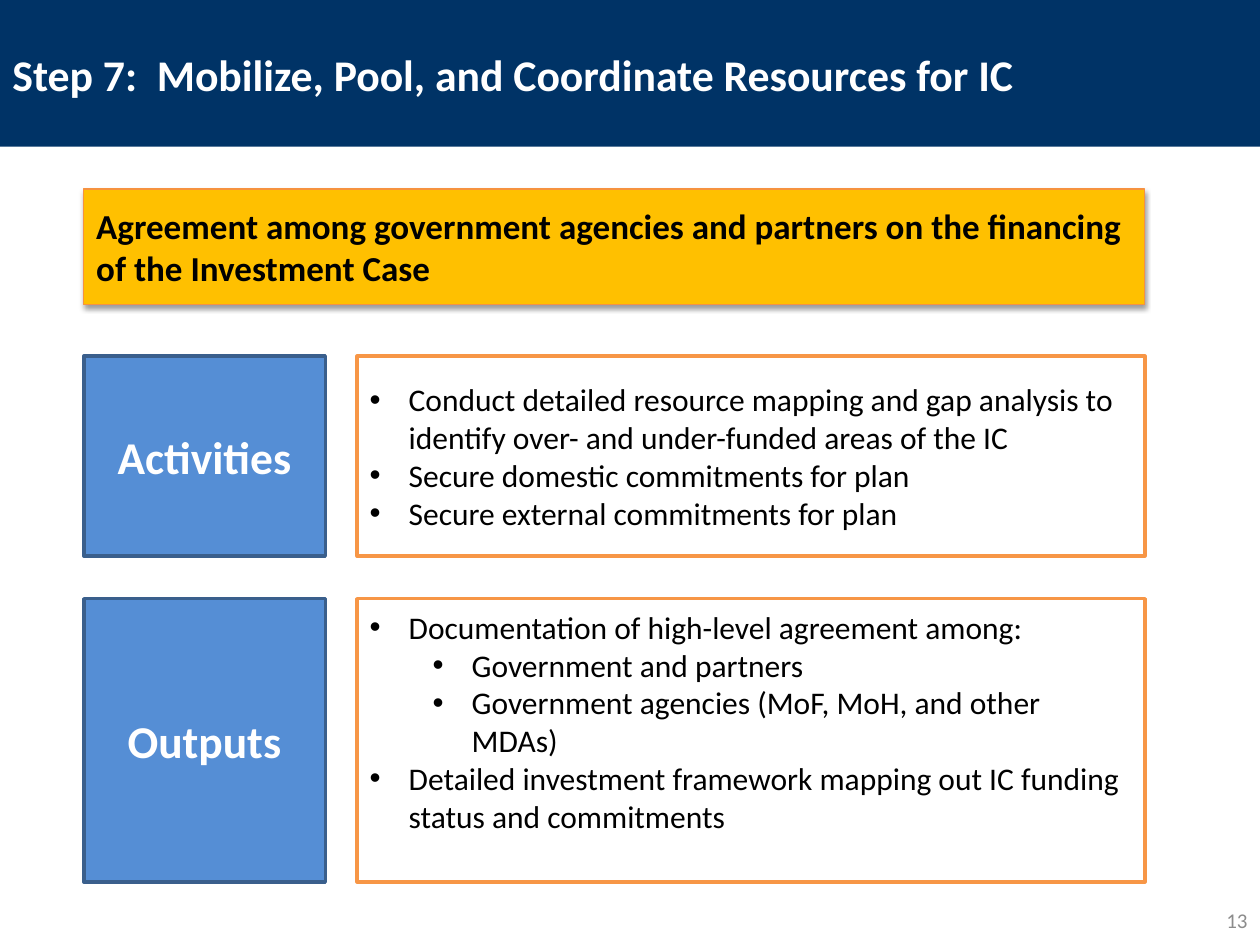
from lxml import etree
from pptx import Presentation
from pptx import util as u
from pptx.dml.color import RGBColor
from pptx.enum import shapes, text
from pptx.oxml import ns

# Content
TITLE = "Step 7:  Mobilize, Pool, and Coordinate Resources for IC"
GOAL = ("Agreement among government agencies and partners on the financing "
        "of the Investment Case")
PAGE_NUMBER = "13"
# Each section: label, top and height (cm), bottom inset (cm), bullets as (level, text)
SECTIONS = [
    ("Activities", 7.18, 4.03, 0.13, [
        (0, "Conduct detailed resource mapping and gap analysis to identify "
            "over- and under-funded areas of the IC"),
        (0, "Secure domestic commitments for plan"),
        (0, "Secure external commitments for plan"),
    ]),
    ("Outputs", 12.07, 5.71, 0.9, [
        (0, "Documentation of high-level agreement among:"),
        (1, "Government and partners"),
        (1, "Government agencies (MoF, MoH, and other MDAs)"),
        (0, "Detailed investment framework mapping out IC funding status "
            "and commitments"),
    ]),
]

COLORS = {
    "navy": "003366", "blue": "558ED5", "blue_edge": "3A5F8C",
    "gold": "FFC000", "gold_edge": "F69240", "orange": "F79646",
    "white": "FFFFFF", "black": "000000", "grey": "8C8C8C",
}
FONT = "Calibri"

# Layout in cm
PAGE_W, PAGE_H = 25.4, 19.05
LEFT, RIGHT = 1.69, 23.08
LABEL_W, DETAIL_LEFT = 4.87, 7.2
INDENT, LEVEL_STEP = 0.79, 1.27


def color(name):
    return RGBColor.from_string(COLORS[name])


def add_rect(page, left, top, width, height, fill, edge=None, weight=2):
    box = page.shapes.add_shape(shapes.MSO_SHAPE.RECTANGLE, u.Cm(left), u.Cm(top),
                                u.Cm(width), u.Cm(height))
    box.shadow.inherit = False
    box.fill.solid()
    box.fill.fore_color.rgb = color(fill)
    if edge:
        box.line.color.rgb = color(edge)
        box.line.width = u.Pt(weight)
    else:
        box.line.fill.background()
    return box


def add_text_box(page, left, top, width, height):
    return page.shapes.add_textbox(u.Cm(left), u.Cm(top), u.Cm(width), u.Cm(height))


def write(box, lines, size, ink, bold=False, align=text.PP_ALIGN.LEFT):
    frame = box.text_frame
    frame.word_wrap = True
    frame.vertical_anchor = text.MSO_ANCHOR.MIDDLE
    frame.text = "\n".join(lines)
    for para in frame.paragraphs:
        para.alignment = align
        for span in para.runs:
            span.font.name = FONT
            span.font.size = u.Pt(size)
            span.font.bold = bold
            span.font.color.rgb = color(ink)


def add_bullet(para, level):
    para.level = level
    props = para._p.get_or_add_pPr()
    props.set("marL", str(u.Cm(INDENT + level * LEVEL_STEP)))
    props.set("indent", str(-u.Cm(INDENT)))
    etree.SubElement(props, ns.qn("a:buFont"), typeface="Arial")
    etree.SubElement(props, ns.qn("a:buChar"), char="•")


def add_shadow(box):
    effects = box._element.spPr.find(ns.qn("a:effectLst"))
    shadow = etree.SubElement(effects, ns.qn("a:outerShdw"), blurRad=str(u.Pt(3.1)),
                              dist=str(u.Pt(1.6)), dir="5400000", rotWithShape="0")
    tint = etree.SubElement(shadow, ns.qn("a:srgbClr"), val=COLORS["black"])
    etree.SubElement(tint, ns.qn("a:alpha"), val="38000")


def main():
    deck = Presentation()
    deck.slide_width, deck.slide_height = u.Cm(PAGE_W), u.Cm(PAGE_H)
    page = deck.slides.add_slide(deck.slide_layouts[6])

    # Page number and title band
    number = add_text_box(page, 19.48, 18.03, PAGE_W - 19.48, 1.02)
    write(number, [PAGE_NUMBER], 12, "grey", align=text.PP_ALIGN.RIGHT)
    add_rect(page, 0, 0, PAGE_W, 2.96, "navy")
    write(add_text_box(page, 0, 0.13, PAGE_W, 2.71), [TITLE], 25, "white", bold=True)

    # Label and bullet box of each section
    for label, top, height, bottom_inset, bullets in SECTIONS:
        tag = add_rect(page, LEFT, top, LABEL_W, height, "blue", "blue_edge")
        write(tag, [label], 26, "white", bold=True, align=text.PP_ALIGN.CENTER)

        detail = add_rect(page, DETAIL_LEFT, top, RIGHT - DETAIL_LEFT, height,
                          "white", "orange")
        write(detail, [line for _, line in bullets], 18, "black")
        detail.text_frame.margin_bottom = u.Cm(bottom_inset)
        for para, (level, _) in zip(detail.text_frame.paragraphs, bullets):
            add_bullet(para, level)

    # Goal banner
    banner = add_rect(page, LEFT, 3.81, RIGHT - LEFT, 2.33, "gold", "gold_edge", 0.75)
    add_shadow(banner)
    write(banner, [GOAL], 20, "black", bold=True)

    deck.save("out.pptx")


if __name__ == "__main__":
    main()
